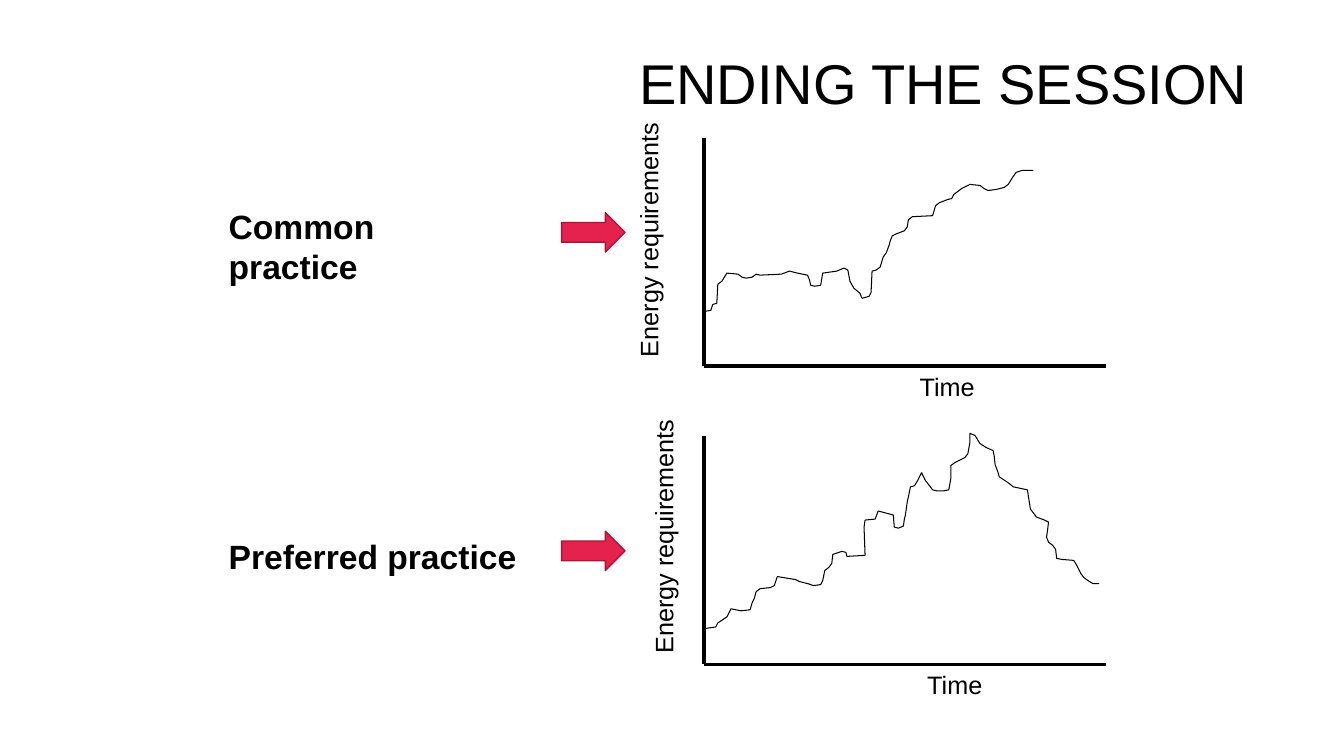
from lxml.etree import SubElement
from pptx import Presentation
from pptx.dml.color import RGBColor
from pptx.enum.shapes import MSO_CONNECTOR, MSO_SHAPE
from pptx.enum.text import MSO_ANCHOR, PP_ALIGN
from pptx.oxml.ns import qn
from pptx.util import Inches, Pt

COLORS = {"ink": "000000", "arrow": "E5224E", "arrow_edge": "A81637"}
FONT = "Arial"
AXIS_LEFT, AXIS_RIGHT, AXIS_HEIGHT = 6.98, 10.97, 2.26

COMMON_CURVE = [
    (698, 309), (705, 308), (707, 302), (711, 301), (712, 282), (716, 279),
    (721, 271), (732, 272), (736, 275), (740, 276), (746, 275), (750, 272),
    (754, 273), (775, 272), (783, 269), (791, 271), (796, 272), (801, 273),
    (803, 278), (804, 283), (808, 284), (814, 283), (816, 271), (830, 269),
    (837, 266), (841, 268), (843, 279), (847, 286), (853, 291), (855, 296),
    (862, 294), (864, 290), (865, 269), (869, 268), (873, 265), (876, 255),
    (879, 251), (882, 243), (883, 239), (885, 234), (889, 232), (897, 229),
    (900, 225), (901, 218), (905, 215), (925, 214), (928, 204), (932, 201),
    (940, 198), (944, 197), (946, 193), (954, 187), (962, 183), (972, 184),
    (976, 187), (980, 189), (988, 188), (996, 186), (1000, 183), (1005, 175),
    (1008, 171), (1014, 169), (1025, 169),
]
PREFERRED_CURVE = [
    (698, 624), (703, 623), (710, 622), (712, 618), (721, 612), (723, 608),
    (725, 604), (735, 606), (744, 605), (746, 598), (748, 594), (750, 587),
    (754, 584), (764, 583), (768, 581), (771, 572), (789, 575), (793, 577),
    (801, 579), (807, 581), (814, 580), (816, 576), (818, 566), (822, 563),
    (825, 559), (826, 550), (835, 547), (839, 548), (840, 552), (858, 551),
    (857, 523), (858, 516), (868, 515), (871, 507), (886, 511), (887, 523),
    (891, 524), (896, 522), (897, 515), (898, 511), (900, 497), (901, 493),
    (903, 483), (907, 482), (910, 477), (914, 469), (916, 473), (918, 477),
    (922, 482), (925, 486), (929, 487), (936, 487), (941, 486), (943, 475),
    (943, 462), (947, 459), (957, 454), (960, 450), (962, 439), (962, 430),
    (967, 432), (972, 440), (978, 444), (985, 447), (986, 452), (987, 461),
    (990, 469), (991, 473), (1000, 479), (1005, 483), (1019, 486), (1022, 505),
    (1028, 513), (1036, 516), (1040, 518), (1039, 526), (1038, 533), (1040, 538),
    (1044, 541), (1047, 545), (1048, 554), (1053, 555), (1065, 556), (1068, 561),
    (1072, 569), (1075, 573), (1079, 576), (1084, 579), (1090, 579),
]


def rgb(name):
    """Return the named slide colour."""
    return RGBColor.from_string(COLORS[name])


def add_text(slide, text, box, size, bold=False, align=PP_ALIGN.LEFT,
             anchor=MSO_ANCHOR.TOP, rotation=0):
    """Add a wrapped one-paragraph text box."""
    shape = slide.shapes.add_textbox(*(Inches(value) for value in box))
    shape.rotation = rotation
    frame = shape.text_frame
    frame.word_wrap = True
    frame.vertical_anchor = anchor
    paragraph = frame.paragraphs[0]
    paragraph.alignment = align
    run = paragraph.add_run()
    run.text = text
    run.font.name = FONT
    run.font.size = Pt(size)
    run.font.bold = bold
    run.font.color.rgb = rgb("ink")


def add_axis_line(slide, start, end):
    """Draw one thick axis line between two points."""
    line = slide.shapes.add_connector(
        MSO_CONNECTOR.STRAIGHT, *(Inches(value) for value in start + end))
    line.line.color.rgb = rgb("ink")
    line.line.width = Pt(2.5)
    SubElement(line._element.spPr, qn("a:effectLst"))


def add_axes(slide, top):
    """Draw the vertical and horizontal axes of one graph."""
    origin = (AXIS_LEFT, top + AXIS_HEIGHT)
    add_axis_line(slide, (AXIS_LEFT, top), origin)
    add_axis_line(slide, origin, (AXIS_RIGHT, origin[1]))


def add_curve(slide, points):
    """Draw an open curve through points in hundredths of an inch."""
    builder = slide.shapes.build_freeform(*points[0], scale=Inches(0.01))
    builder.add_line_segments(points[1:], close=False)
    curve = builder.convert_to_shape()
    curve.shadow.inherit = False
    curve.fill.background()
    curve.line.color.rgb = rgb("ink")
    curve.line.width = Pt(0.75)


def add_arrow(slide, top):
    """Add a red arrow that points at a graph."""
    arrow = slide.shapes.add_shape(
        MSO_SHAPE.RIGHT_ARROW, Inches(5.57), Inches(top), Inches(0.63), Inches(0.39))
    arrow.shadow.inherit = False
    arrow.fill.solid()
    arrow.fill.fore_color.rgb = rgb("arrow")
    arrow.line.color.rgb = rgb("arrow_edge")
    arrow.line.width = Pt(1)


def add_practice(slide, name, name_box, arrow_top, axis_top, energy_box, time_box, curve):
    """Add one practice: its name, arrow and labelled graph."""
    add_curve(slide, curve)
    add_axes(slide, axis_top)
    add_arrow(slide, arrow_top)
    add_text(slide, name, name_box, 24, bold=True)
    add_text(slide, "Energy requirements", energy_box, 18, rotation=270)
    add_text(slide, "Time", time_box, 18, align=PP_ALIGN.CENTER)


def main():
    """Build and save the slide."""
    presentation = Presentation()
    presentation.slide_width = Inches(13.33)
    presentation.slide_height = Inches(7.5)
    slide = presentation.slides.add_slide(presentation.slide_layouts[6])
    add_text(slide, "ENDING THE SESSION", (3.05, 0.11, 9.42, 1.41), 40,
             align=PP_ALIGN.RIGHT, anchor=MSO_ANCHOR.MIDDLE)
    add_practice(slide, "Common practice", (2.17, 1.99, 2.93, 0.91), 2.11, 1.37,
                 (5.27, 1.97, 2.63, 0.71), (7.93, 3.63, 2.93, 0.4), COMMON_CURVE)
    add_practice(slide, "Preferred practice", (2.17, 5.27, 3.13, 0.5), 5.27, 4.33,
                 (5.2, 5, 2.76, 0.4), (7.84, 6.59, 3.26, 0.4), PREFERRED_CURVE)
    presentation.save("out.pptx")


if __name__ == "__main__":
    main()
